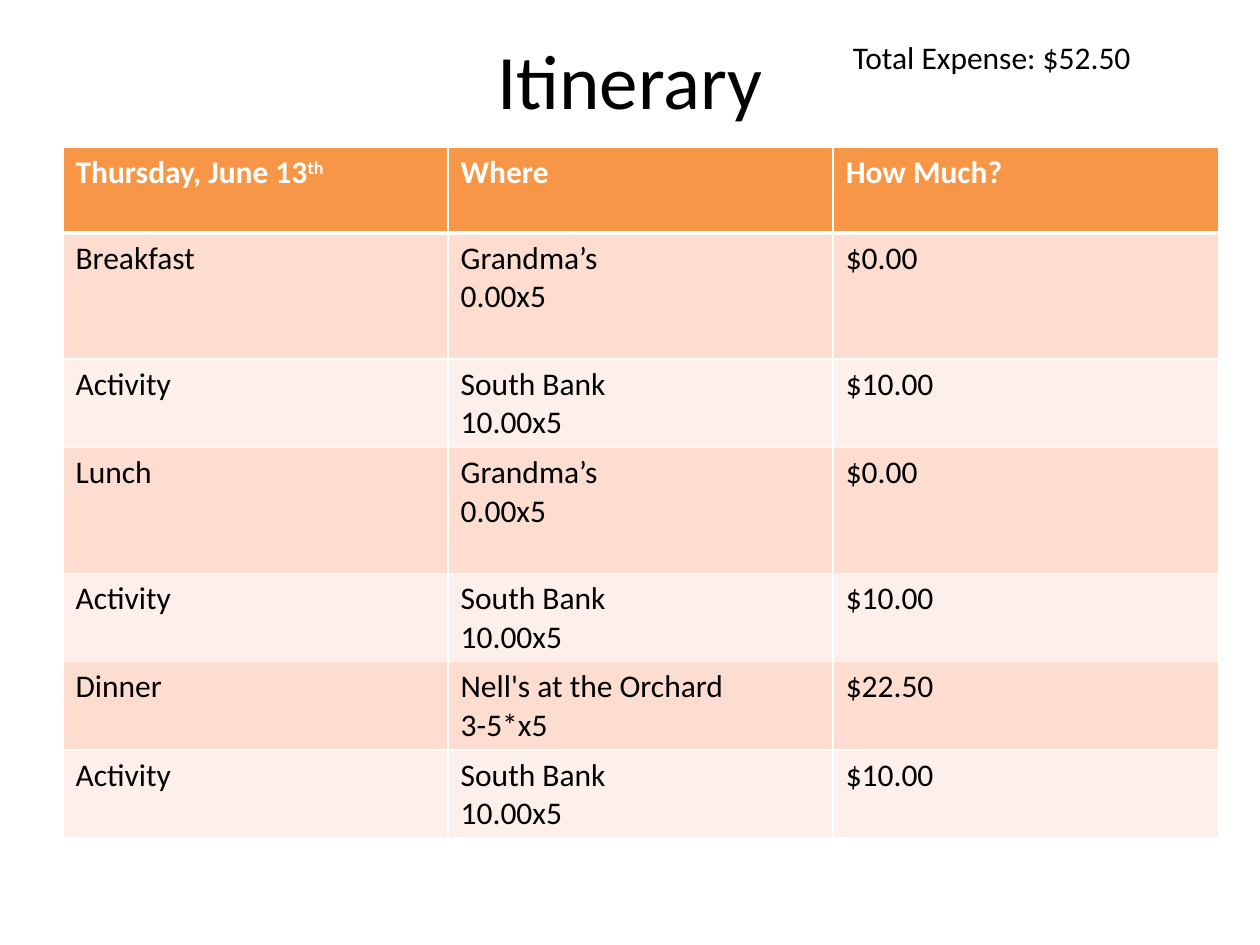
"""Build a one-day itinerary slide with its cost table."""
from lxml.etree import fromstring
from pptx import Presentation
from pptx.dml.color import RGBColor
from pptx.enum.text import MSO_ANCHOR, PP_ALIGN
from pptx.util import Inches, Pt


def style(para, size, color, bold=False):
    para.font.name = "Calibri"
    para.font.size = Pt(size)
    para.font.bold = bold
    para.font.color.rgb = RGBColor.from_string(color)


def add_label(left, top, width, height, text, size, align, anchor):
    box = slide.shapes.add_textbox(Inches(left), Inches(top), Inches(width), Inches(height))
    frame = box.text_frame
    frame.word_wrap = True
    frame.vertical_anchor = anchor
    para = frame.paragraphs[0]
    para.text = text
    para.alignment = align
    style(para, size, "000000")


HEADER = ("Thursday, June 13", "Where", "How Much?")
GRANDMA = ("Grandma’s\n0.00x5", "$0.00")
SOUTH_BANK = ("South Bank\n10.00x5", "$10.00")
ROWS = [
    HEADER,
    ("Breakfast", *GRANDMA),
    ("Activity", *SOUTH_BANK),
    ("Lunch", *GRANDMA),
    ("Activity", *SOUTH_BANK),
    ("Dinner", "Nell's at the Orchard\n3-5*x5", "$22.50"),
    ("Activity", *SOUTH_BANK),
]
HEIGHTS = [0.68, 1, 0.7, 1, 0.7, 0.7, 0.7]
BANDS = ["FDEFE9", "FCDDCF"]
HEADER_RULE = (
    '<a:lnB xmlns:a="http://schemas.openxmlformats.org/drawingml/2006/main" w="38100">'
    '<a:solidFill><a:srgbClr val="FFFFFF"/></a:solidFill></a:lnB>'
)

deck = Presentation()
deck.slide_width, deck.slide_height = Inches(10), Inches(7.5)
slide = deck.slides.add_slide(deck.slide_layouts[6])

add_label(0.5, 0, 9, 1.25, "Itinerary", 44, PP_ALIGN.CENTER, MSO_ANCHOR.MIDDLE)
add_label(6.67, 0.25, 3.08, 0.4, "Total Expense: $52.50", 18, PP_ALIGN.LEFT, MSO_ANCHOR.TOP)

table = slide.shapes.add_table(
    len(ROWS), len(HEADER), Inches(0.5), Inches(1.17), Inches(9.17), Inches(sum(HEIGHTS))
).table
for row_index, (texts, height) in enumerate(zip(ROWS, HEIGHTS)):
    is_header = row_index == 0
    table.rows[row_index].height = Inches(height)
    for column_index, text in enumerate(texts):
        cell = table.cell(row_index, column_index)
        cell.fill.solid()
        cell.fill.fore_color.rgb = RGBColor.from_string("F79646" if is_header else BANDS[row_index % 2])
        if is_header:
            cell._tc.get_or_add_tcPr().insert(0, fromstring(HEADER_RULE))
        cell.text = text
        for para in cell.text_frame.paragraphs:
            style(para, 18, "FFFFFF" if is_header else "000000", is_header)

ordinal = table.cell(0, 0).text_frame.paragraphs[0].add_run()
ordinal.text = "th"
ordinal.font._element.set("baseline", "30000")

deck.save("out.pptx")
